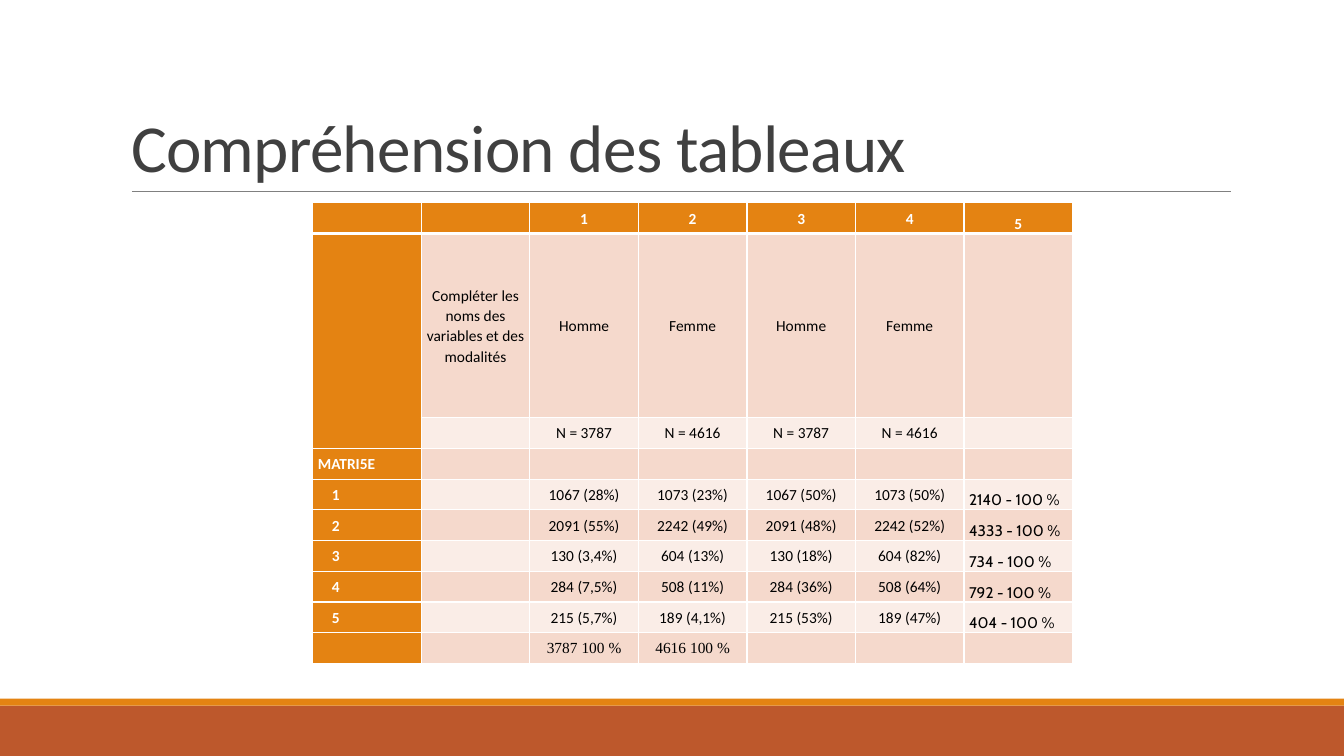
import pptx
import pptx.dml.color
import pptx.enum.shapes
import pptx.enum.text
import pptx.oxml
import pptx.oxml.ns
import pptx.util

Pt = pptx.util.Pt
ALIGN = pptx.enum.text.PP_ALIGN
ANCHOR = pptx.enum.text.MSO_ANCHOR
SHAPE = pptx.enum.shapes.MSO_SHAPE
LINE = pptx.enum.shapes.MSO_CONNECTOR.STRAIGHT

ORANGE, RUST, WHITE, BLACK = "E48312", "BD582C", "FFFFFF", "000000"
BANDS = ("FAEDE7", "F5D9CC")

ROWS = [
    ["", "", "1", "2", "3", "4", "5"],
    ["", "Compléter les noms des variables et des modalités",
     "Homme", "Femme", "Homme", "Femme", ""],
    ["", "", "N = 3787", "N = 4616", "N = 3787", "N = 4616", ""],
    ["MATRI5E", "", "", "", "", "", ""],
    ["1", "", "1067 (28%)", "1073 (23%)", "1067 (50%)", "1073 (50%)", "2140 - 100 %"],
    ["2", "", "2091 (55%)", "2242 (49%)", "2091 (48%)", "2242 (52%)", "4333 - 100 %"],
    ["3", "", "130 (3,4%)", "604 (13%)", "130 (18%)", "604 (82%)", "734 - 100 %"],
    ["4", "", "284 (7,5%)", "508 (11%)", "284 (36%)", "508 (64%)", "792 - 100 %"],
    ["5", "", "215 (5,7%)", "189 (4,1%)", "215 (53%)", "189 (47%)", "404 - 100 %"],
    ["", "", "3787 100 %", "4616 100 %", "", "", ""],
]


def rgb(code):
    return pptx.dml.color.RGBColor.from_string(code)


def element(xml):
    return pptx.oxml.parse_xml(xml.replace("NS", pptx.oxml.ns.nsdecls("a"), 1))


def apply(target, values):
    for name, value in values.items():
        setattr(target, name, value)


class Deck:
    def __init__(self, width, height):
        self.prs = pptx.Presentation()
        apply(self.prs, {"slide_width": Pt(width), "slide_height": Pt(height)})
        self.s = self.prs.slides.add_slide(self.prs.slide_layouts[5])
        self.font, self.size = "Calibri", 11

    def bar(self, x, y, w, h, color):
        sp = self.s.shapes.add_shape(SHAPE.RECTANGLE, Pt(x), Pt(y), Pt(w), Pt(h))
        sp.shadow.inherit = False
        sp.fill.solid()
        sp.fill.fore_color.rgb = rgb(color)
        sp.line.fill.background()

    def rule(self, x, y, w, color, weight):
        ln = self.s.shapes.add_connector(LINE, Pt(x), Pt(y), Pt(x + w), Pt(y))
        ln.line.color.rgb = rgb(color)
        ln.line.width = Pt(weight)
        ln._element.spPr.append(element("<a:effectLst NS/>"))

    def run(self, p, text, color, **values):
        r = p.add_run()
        r.text = text
        apply(r.font, {"name": self.font, "size": Pt(self.size), **values})
        r.font.color.rgb = rgb(color)
        return r

    def title(self, x, y, w, h, text):
        sp = self.s.shapes.title
        apply(sp, {"left": Pt(x), "top": Pt(y), "width": Pt(w), "height": Pt(h)})
        tf = sp.text_frame
        apply(tf, {"word_wrap": True, "vertical_anchor": ANCHOR.BOTTOM,
                   "auto_size": pptx.enum.text.MSO_AUTO_SIZE.NONE})
        p = tf.paragraphs[0]
        apply(p, {"alignment": ALIGN.LEFT, "line_spacing": 0.85})
        r = self.run(p, text, "404040", size=Pt(48))
        r.font._element.set("spc", "-50")

    def borders(self, cell, **weights):
        for side in "LRTB":
            cell._tc.get_or_add_tcPr().append(element(
                f'<a:ln{side} NS w="{Pt(weights.get(side, 1))}"><a:solidFill>'
                f'<a:srgbClr val="{WHITE}"/></a:solidFill></a:ln{side}>'))

    def cell(self, cell, text, fill, color, align, anchor, after, indent, **values):
        apply(cell, {"margin_left": Pt(3.6 + indent), "margin_right": Pt(3.6),
                     "margin_top": 0, "margin_bottom": 0, "vertical_anchor": anchor})
        cell.fill.solid()
        cell.fill.fore_color.rgb = rgb(fill)
        p = cell.text_frame.paragraphs[0]
        apply(p, {"alignment": align, "line_spacing": 1.07, "space_after": Pt(after)})
        if text:
            self.run(p, text, color, **values)
        else:
            # Keeps an empty cell from stretching its row
            p._p.append(element(f'<a:endParaRPr NS sz="{self.size * 100}"/>'))

    def table(self, x, y, widths, heights, rows):
        tbl = self.s.shapes.add_table(len(rows), len(widths), Pt(x), Pt(y),
                                      Pt(sum(widths)), Pt(sum(heights))).table
        for column, width in zip(tbl.columns, widths):
            column.width = Pt(width)
        for row, height in zip(tbl.rows, heights):
            row.height = Pt(height)
        last_row, last_col = len(rows) - 1, len(widths) - 1
        for i, row in enumerate(rows):
            for j, text in enumerate(row):
                head = i == 0 or j == 0
                total = j == last_col and i > 0
                font = "Cabin" if total else "Times New Roman" if i == last_row else self.font
                cell = tbl.cell(i, j)
                self.borders(cell, **({"B": 3} if i == 0 else {"T": 3} if i == 1 else {}))
                self.cell(cell, text,
                          ORANGE if head else BANDS[i % 2],
                          WHITE if head else BLACK,
                          ALIGN.LEFT if j == 0 or total else ALIGN.CENTER,
                          ANCHOR.BOTTOM if j == last_col else ANCHOR.MIDDLE,
                          0 if total else 8,
                          10 if j == 0 and text.isdigit() else 0,
                          name=font, bold=head)
        tbl.cell(1, 0).merge(tbl.cell(2, 0))


def main():
    deck = Deck(960, 540)

    # Footer bands and title rule
    deck.bar(0, 504, 960, 36, RUST)
    deck.bar(0, 499, 960, 5, ORANGE)
    deck.rule(94.3, 136.9, 785, "808080", 0.5)

    # Title
    deck.title(86.4, 22.6, 792, 114.2, "Compréhension des tableaux")

    # Cross table
    heights = [21.95] * len(ROWS)
    heights[1] = 131.5
    deck.table(223.4, 144.9, [77.55] * 7, heights, ROWS)

    deck.prs.save("out.pptx")


if __name__ == "__main__":
    main()
